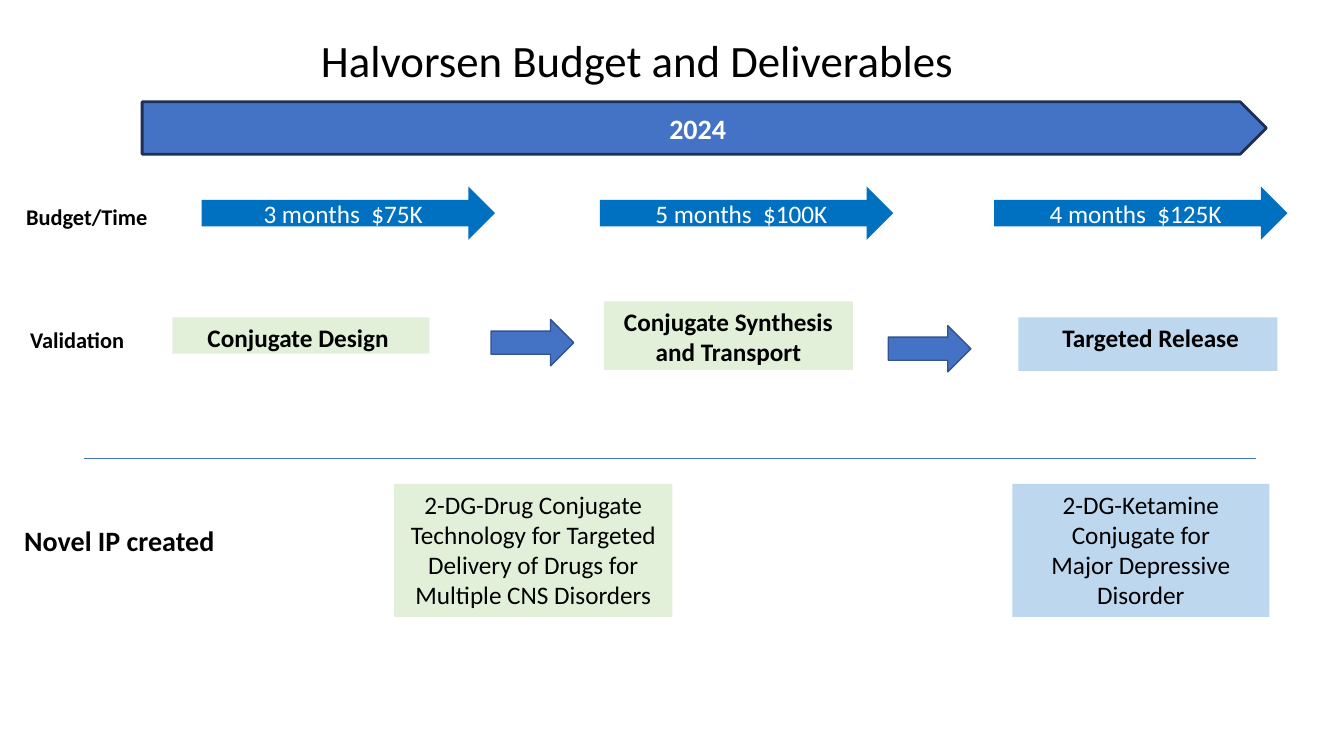
from lxml.etree import SubElement
from pptx import Presentation
from pptx.dml.color import RGBColor
from pptx.enum.shapes import MSO_CONNECTOR, MSO_SHAPE
from pptx.enum.text import MSO_ANCHOR, PP_ALIGN
from pptx.oxml.ns import qn
from pptx.util import Inches, Pt

BLACK = RGBColor(0x00, 0x00, 0x00)
WHITE = RGBColor(0xFF, 0xFF, 0xFF)
BLUE = RGBColor(0x44, 0x72, 0xC4)
BLUE_EDGE = RGBColor(0x32, 0x53, 0x8F)
NAVY = RGBColor(0x1D, 0x30, 0x53)
BUDGET_BLUE = RGBColor(0x00, 0x70, 0xC0)
PALE_GREEN = RGBColor(0xE2, 0xF0, 0xD9)
PALE_BLUE = RGBColor(0xBD, 0xD7, 0xEE)


def write(tf, text, size, color=BLACK, bold=False, align=PP_ALIGN.CENTER,
          anchor=MSO_ANCHOR.TOP, wrap=True, pad=0.05):
    tf.text = text
    tf.word_wrap = wrap
    tf.vertical_anchor = anchor
    tf.margin_left = tf.margin_right = Inches(0.05)
    tf.margin_top = tf.margin_bottom = Inches(pad)
    for p in tf.paragraphs:
        p.alignment = align
        for r in p.runs:
            r.font.name = "Calibri"
            r.font.size = Pt(size)
            r.font.bold = bold
            r.font.color.rgb = color


def add_block(s, kind, box, fill, edge=None, weight=1):
    sp = s.shapes.add_shape(kind, *map(Inches, box))
    sp.shadow.inherit = False
    sp.fill.solid()
    sp.fill.fore_color.rgb = fill
    if edge is None:
        sp.line.fill.background()
    else:
        sp.line.color.rgb = edge
        sp.line.width = Pt(weight)
    return sp


def add_label(s, text, box, size):
    tb = s.shapes.add_textbox(*map(Inches, box))
    write(tb.text_frame, text, size, bold=True, align=PP_ALIGN.LEFT, wrap=False)


def add_card(s, text, box, fill, bold=False):
    sp = add_block(s, MSO_SHAPE.RECTANGLE, box, fill)
    write(sp.text_frame, text, 18, bold=bold)


def add_title(s, box):
    title = s.shapes.title
    title.left, title.top, title.width, title.height = map(Inches, box)
    write(title.text_frame, "Halvorsen Budget and Deliverables", 32,
          anchor=MSO_ANCHOR.MIDDLE)
    title.text_frame.paragraphs[0].line_spacing = 0.9


def add_year_bar(s, box):
    sp = add_block(s, MSO_SHAPE.PENTAGON, box, BLUE, NAVY, 2)
    write(sp.text_frame, "2024", 20, WHITE, True, anchor=MSO_ANCHOR.MIDDLE)


def add_budget_row(s, left, top):
    add_label(s, "Budget/Time", (left, top + 0.12, 1.32, 0.33), 16)
    steps = [(1.79, "3 months  $75K"), (5.74, "5 months  $100K"),
             (9.65, "4 months  $125K")]
    for dx, text in steps:
        sp = add_block(s, MSO_SHAPE.RIGHT_ARROW,
                       (left + dx, top, 2.91, 0.53), BUDGET_BLUE)
        write(sp.text_frame, text, 18, WHITE, anchor=MSO_ANCHOR.MIDDLE, pad=0)
        sp.text_frame.margin_left = Inches(0.08)


def add_validation_row(s, left, top):
    add_label(s, "Validation", (left, top + 0.2, 1.05, 0.33), 16)
    cards = [("Conjugate Design ", 1.46, 0.16, 2.55, 0.36, PALE_GREEN),
             ("Conjugate Synthesis and Transport", 5.74, 0, 2.47, 0.68, PALE_GREEN),
             (" Targeted Release", 9.85, 0.16, 2.57, 0.53, PALE_BLUE)]
    for text, dx, dy, w, h, fill in cards:
        add_card(s, text, (left + dx, top + dy, w, h), fill, bold=True)
    for dx, dy in [(4.62, 0.18), (8.56, 0.24)]:
        add_block(s, MSO_SHAPE.RIGHT_ARROW,
                  (left + dx, top + dy, 0.82, 0.46), BLUE, BLUE_EDGE)


def add_divider(s, left, right, y):
    line = s.shapes.add_connector(MSO_CONNECTOR.STRAIGHT, Inches(left),
                                  Inches(y), Inches(right), Inches(y))
    line.line.color.rgb = BLUE
    line.line.width = Pt(1)
    SubElement(line._element.spPr, qn("a:effectLst"))


def add_ip_row(s, left, top):
    add_label(s, "Novel IP created", (left, top + 0.34, 2, 0.37), 20)
    add_card(s, "2-DG-Drug Conjugate\nTechnology for Targeted Delivery of "
                "Drugs for Multiple CNS Disorders",
             (left + 3.72, top, 2.76, 1.32), PALE_GREEN)
    add_card(s, "2-DG-Ketamine Conjugate for\nMajor Depressive\nDisorder",
             (left + 9.85, top, 2.55, 1.32), PALE_BLUE)


def main():
    prs = Presentation()
    prs.slide_width = Inches(13.33)
    prs.slide_height = Inches(7.5)
    s = prs.slides.add_slide(prs.slide_layouts[5])
    add_title(s, (0.22, 0, 12.2, 1.24))
    add_year_bar(s, (1.41, 1.01, 11.15, 0.52))
    add_budget_row(s, 0.21, 1.85)
    add_validation_row(s, 0.25, 2.99)
    add_divider(s, 0.83, 12.46, 4.55)
    add_ip_row(s, 0.19, 4.8)
    prs.save("out.pptx")


if __name__ == "__main__":
    main()
